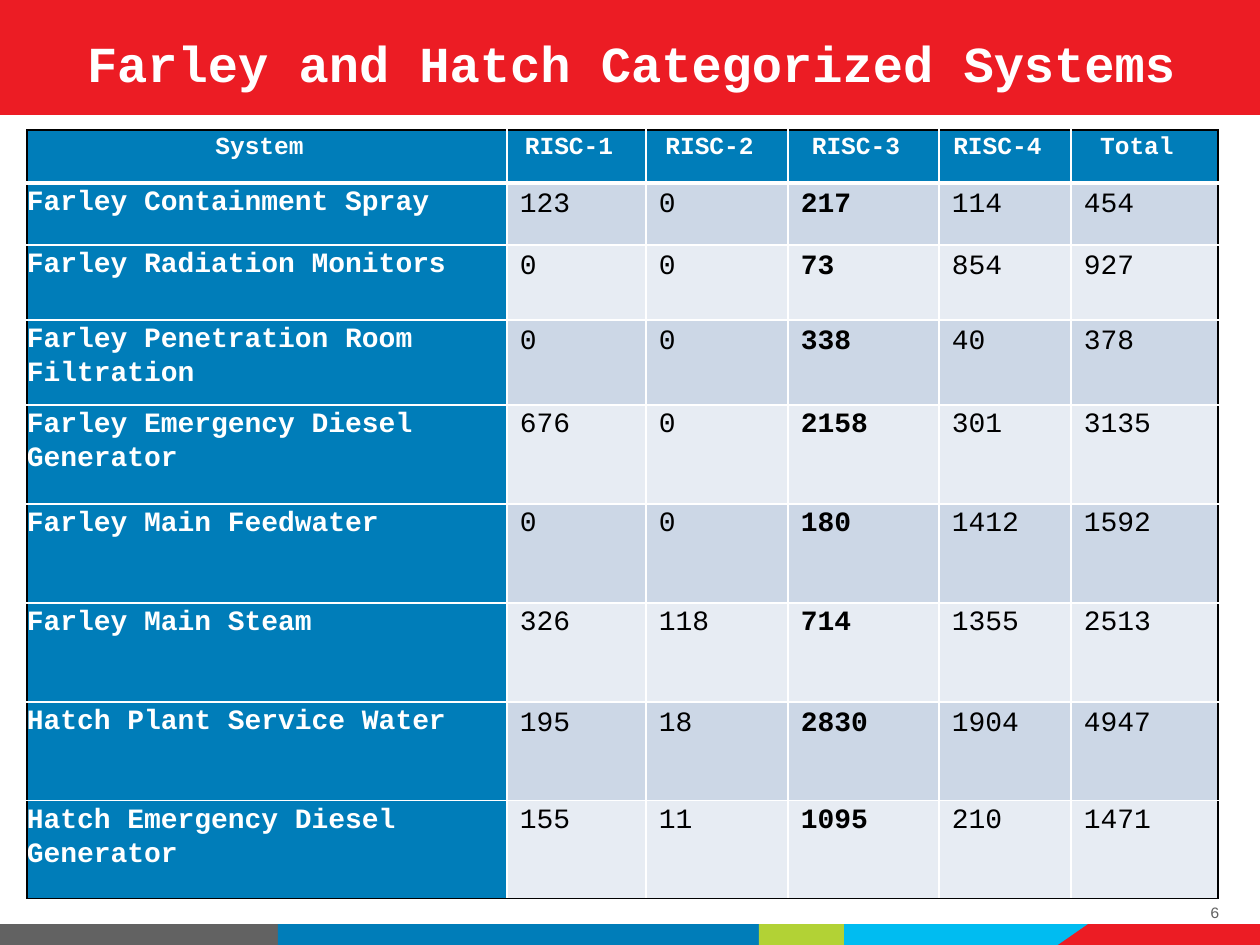
from lxml.etree import SubElement
from pptx import Presentation
from pptx.dml.color import RGBColor
from pptx.enum.shapes import MSO_SHAPE
from pptx.enum.text import MSO_ANCHOR, PP_ALIGN
from pptx.oxml.ns import qn
from pptx.util import Emu, Pt

PX_PER_INCH = 126
COLORS = {
    "white": "FFFFFF", "black": "000000", "red": "EC1C24", "gray": "626262",
    "blue": "007DB9", "green": "B2D235", "cyan": "00BCF1",
    "band_dark": "CCD7E6", "band_light": "E7ECF3",
}
NO_BREAK_SPACE = chr(160)

HEADERS = ["System", "RISC-1", "RISC-2", "RISC-3", "RISC-4", "Total"]
SYSTEMS = [
    ("Farley Containment Spray", 123, 0, 217, 114, 454),
    ("Farley Radiation Monitors", 0, 0, 73, 854, 927),
    ("Farley Penetration Room Filtration", 0, 0, 338, 40, 378),
    ("Farley Emergency Diesel Generator", 676, 0, 2158, 301, 3135),
    ("Farley Main Feedwater", 0, 0, 180, 1412, 1592),
    ("Farley Main Steam", 326, 118, 714, 1355, 2513),
    ("Hatch Plant Service Water", 195, 18, 2830, 1904, 4947),
    ("Hatch Emergency Diesel Generator", 155, 11, 1095, 210, 1471),
]
COLUMN_WIDTHS = [480, 139, 142, 151, 132, 147]
ROW_HEIGHTS = [53, 62, 75, 85, 99, 99, 99, 99, 98]
TIGHT_ROWS = {4, 5, 6, 8}
BOLD_COLUMN = 3


def px(length):
    return Emu(round(length * 914400 / PX_PER_INCH))


def rgb(name):
    return RGBColor.from_string(COLORS[name])


class SlideBuilder:
    font = "Courier New"

    def __init__(self, presentation):
        self.slide = presentation.slides.add_slide(presentation.slide_layouts[5])

    def paint(self, shape, color):
        shape.shadow.inherit = False
        shape.fill.solid()
        shape.fill.fore_color.rgb = rgb(color)
        shape.line.fill.background()

    def bar(self, left, top, width, height, color):
        shape = self.slide.shapes.add_shape(
            MSO_SHAPE.RECTANGLE, px(left), px(top), px(width), px(height))
        self.paint(shape, color)

    def outline(self, points, color):
        builder = self.slide.shapes.build_freeform(
            *points[0], scale=914400 / PX_PER_INCH)
        builder.add_line_segments(points[1:], close=True)
        self.paint(builder.convert_to_shape(), color)

    def add_text(self, frame, text, size, color, bold=False,
                 align=PP_ALIGN.LEFT, spacing=None):
        paragraph = frame.paragraphs[0]
        paragraph.alignment = align
        if spacing:
            paragraph.line_spacing = spacing
        run = paragraph.add_run()
        run.text = text
        run.font.name = self.font
        run.font.size = Pt(size)
        run.font.bold = bold
        run.font.color.rgb = rgb(color)

    def title(self, text, left, top, width, height):
        shape = self.slide.shapes.title
        shape.left, shape.top = px(left), px(top)
        shape.width, shape.height = px(width), px(height)
        shape.text_frame.vertical_anchor = MSO_ANCHOR.MIDDLE
        self.add_text(shape.text_frame, text, 28.8, "white", True, PP_ALIGN.CENTER)
        # Bring the title in front of the header band
        shape.element.getparent().append(shape.element)

    def label(self, text, left, top, width, height):
        box = self.slide.shapes.add_textbox(px(left), px(top), px(width), px(height))
        box.text_frame.word_wrap = True
        box.text_frame.vertical_anchor = MSO_ANCHOR.MIDDLE
        self.add_text(box.text_frame, text, 9, "gray", align=PP_ALIGN.RIGHT)

    def borders(self, cell, sides):
        properties = cell._tc.get_or_add_tcPr()
        for side, (color, points) in sides.items():
            line = SubElement(properties, qn(f"a:ln{side}"), w=str(Pt(points)))
            fill = SubElement(line, qn("a:solidFill"))
            SubElement(fill, qn("a:srgbClr"), val=COLORS[color])

    def margins(self, cell, side, end):
        cell.margin_left = cell.margin_right = px(side)
        cell.margin_top = cell.margin_bottom = px(end)

    def table(self, left, top):
        rows, columns = len(ROW_HEIGHTS), len(COLUMN_WIDTHS)
        table = self.slide.shapes.add_table(
            rows, columns, px(left), px(top),
            px(sum(COLUMN_WIDTHS)), px(sum(ROW_HEIGHTS))).table
        table.first_col = True
        for column, width in zip(table.columns, COLUMN_WIDTHS):
            column.width = px(width)
        for row, height in zip(table.rows, ROW_HEIGHTS):
            row.height = px(height)
        for r, values in enumerate([HEADERS, *SYSTEMS]):
            for c, value in enumerate(values):
                cell = table.cell(r, c)
                # Black outer frame, white inner grid, thick rule below the header
                self.borders(cell, {
                    "L": ("black" if c == 0 else "white", 1),
                    "R": ("black" if c == columns - 1 else "white", 1),
                    "T": ("black" if r == 0 else "white", 3 if r == 1 else 1),
                    "B": ("black" if r == rows - 1 else "white", 3 if r == 0 else 1),
                })
                heading = r == 0 or c == 0
                band = "band_dark" if r % 2 else "band_light"
                cell.fill.solid()
                cell.fill.fore_color.rgb = rgb("blue" if heading else band)
                if heading:
                    self.margins(cell, 0, 2)
                else:
                    self.margins(cell, 13, 4 if r in TIGHT_ROWS else 6)
                if r == 0:
                    self.add_text(cell.text_frame, value + NO_BREAK_SPACE, 14, "white",
                                  True, PP_ALIGN.CENTER, 1.07)
                elif c == 0:
                    self.add_text(cell.text_frame, value, 16, "white", True, spacing=1.07)
                else:
                    self.add_text(cell.text_frame, str(value), 16, "black",
                                  c == BOLD_COLUMN)


def main():
    presentation = Presentation()
    presentation.slide_width, presentation.slide_height = px(1260), px(945)
    builder = SlideBuilder(presentation)

    # Footer stripe
    for left, width, color in [(0, 343, "gray"), (278, 481, "blue"),
                               (759, 85, "green"), (844, 247, "cyan")]:
        builder.bar(left, 924, width, 21, color)
    builder.outline([(1260, 804), (1172, 866), (1058, 945), (1260, 945)], "red")

    # Header band and white panel above the stripe
    builder.bar(0, 0, 1260, 115, "red")
    builder.bar(1031, 790, 229, 134, "white")

    # Content
    builder.title("Farley and Hatch Categorized Systems", 33, 29, 1197, 66)
    builder.table(27, 130)
    builder.label("6", 939, 898, 293, 28)

    presentation.save("out.pptx")


if __name__ == "__main__":
    main()
